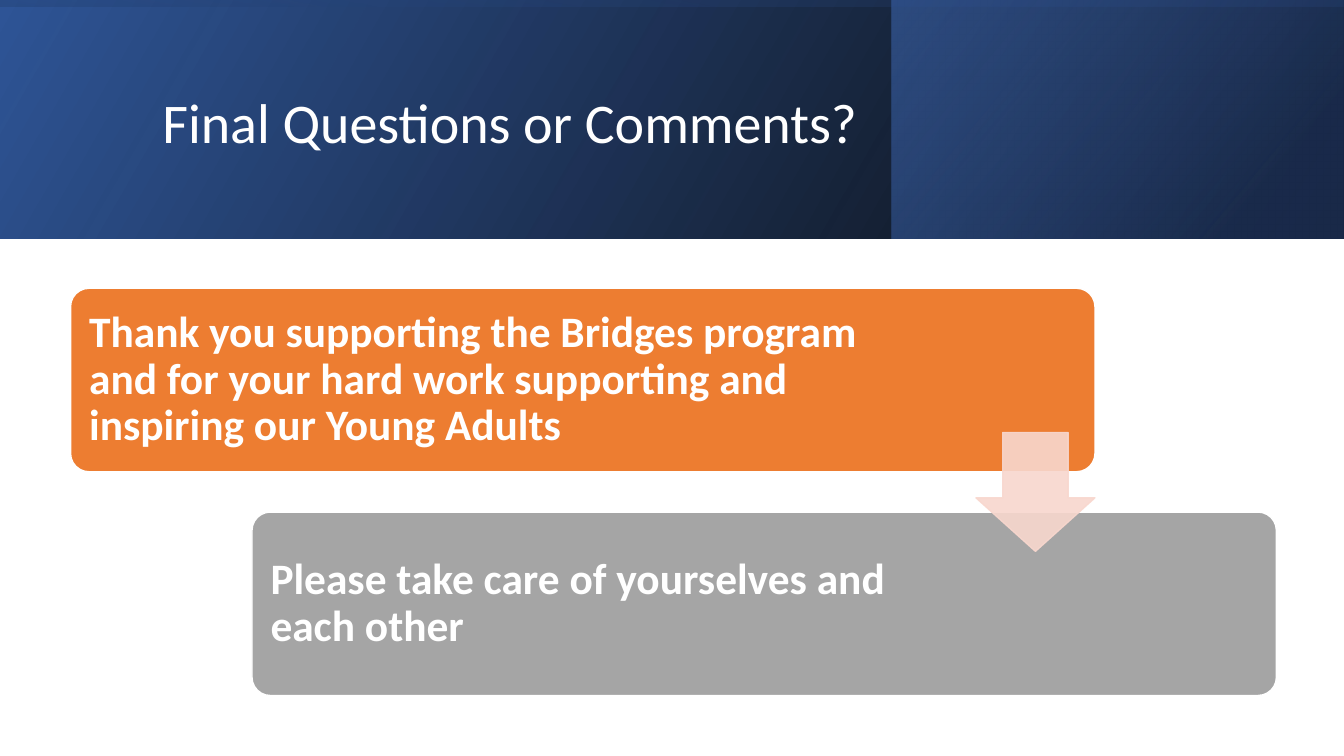
from dataclasses import dataclass

from lxml import etree
from pptx import Presentation
from pptx import util as u
from pptx.dml.color import RGBColor
from pptx.enum import shapes, text
from pptx.oxml.ns import qn

prs = Presentation()
prs.slide_width, prs.slide_height = u.Inches(13.33), u.Inches(7.5)
W, H = prs.slide_width, prs.slide_height
FONT, WHITE, BLUSH = "Calibri", "FFFFFF", "F8D7CE"
BAND_HEIGHT = 31.6


@dataclass
class Stop:
    position: int
    color: str
    alpha: int = 100


@dataclass
class Band:
    left: float
    width: float
    angle: int
    stops: list[Stop]
    turned: bool = False


@dataclass
class Card:
    message: str
    color: str
    text_width: float


# All positions and sizes are percentages of the slide
BANDS = [
    Band(0, 100, 330, [Stop(0, "000000", 96), Stop(100, "2F5597")]),
    Band(66.32, 33.61, 320, [Stop(19, "203864", 68), Stop(100, "4472C4", 48)]),
    Band(0, 100, 350, [Stop(23, "2F5597", 16), Stop(99, "000000", 45)], True),
]
CARDS = [
    Card("Thank you supporting the Bridges program and for your hard work "
         "supporting and inspiring our Young Adults", "ED7D31", 62.12),
    Card("Please take care of yourselves and each other", "A5A5A5", 53.11),
]
CARD_LEFT, CARD_TOP, CARD_WIDTH, CARD_HEIGHT = 5.25, 38.13, 76.22, 24.27
STEP_X, STEP_Y = 13.5, 29.6
INSET_X, INSET_Y = 0.4, 0.73


def px(share: float) -> int:
    return round(W * share / 100)


def py(share: float) -> int:
    return round(H * share / 100)


def rgb(color: str) -> RGBColor:
    return RGBColor.from_string(color)


def add_alpha(color_node, percent: int) -> None:
    etree.SubElement(color_node, qn("a:alpha")).set("val", str(percent * 1000))


def add_band(s, band: Band) -> None:
    left, top, width, height = px(band.left), 0, px(band.width), py(BAND_HEIGHT)
    if band.turned:  # swap the sides around the same centre
        left, top = left + (width - height) // 2, top + (height - width) // 2
        width, height = height, width
    sp = s.shapes.add_shape(shapes.MSO_SHAPE.RECTANGLE, left, top, width, height)
    sp.shadow.inherit = False
    sp.line.fill.background()
    sp.rotation = 270 if band.turned else 0
    sp._element.spPr.find(qn("a:xfrm")).set("flipH", "1")
    sp.fill.gradient()
    grad = sp._element.spPr.find(qn("a:gradFill"))
    for child in list(grad):
        grad.remove(child)
    grad.set("rotWithShape", "1")
    stops = etree.SubElement(grad, qn("a:gsLst"))
    for stop in band.stops:
        gs = etree.SubElement(stops, qn("a:gs"), pos=str(stop.position * 1000))
        color = etree.SubElement(gs, qn("a:srgbClr"), val=stop.color)
        if stop.alpha < 100:
            add_alpha(color, stop.alpha)
    etree.SubElement(grad, qn("a:lin"), ang=str(band.angle * 60000), scaled="0")


def add_solid(s, kind, left: float, top: float, width: float, height: float,
              fill: str, line: str):
    sp = s.shapes.add_shape(kind, px(left), py(top), px(width), py(height))
    sp.shadow.inherit = False
    sp.fill.solid()
    sp.fill.fore_color.rgb = rgb(fill)
    sp.line.color.rgb = rgb(line)
    sp.line.width = u.Pt(1)
    return sp


def write(tf, content: str, size: int, bold: bool) -> None:
    tf.word_wrap = True
    tf.auto_size = text.MSO_AUTO_SIZE.NONE
    tf.vertical_anchor = text.MSO_ANCHOR.MIDDLE
    tf.text = content
    p = tf.paragraphs[0]
    p.alignment = text.PP_ALIGN.LEFT
    p.line_spacing = 0.9
    font = p.runs[0].font
    font.name, font.size, font.bold = FONT, u.Pt(size), bold
    font.color.rgb = rgb(WHITE)


def add_card(s, card: Card, index: int) -> None:
    left, top = CARD_LEFT + index * STEP_X, CARD_TOP + index * STEP_Y
    sp = add_solid(s, shapes.MSO_SHAPE.ROUNDED_RECTANGLE, left, top,
                   CARD_WIDTH, CARD_HEIGHT, card.color, WHITE)
    sp.adjustments[0] = 0.1
    box = s.shapes.add_textbox(px(left + INSET_X), py(top + INSET_Y),
                               px(card.text_width), py(CARD_HEIGHT - 2 * INSET_Y))
    tf = box.text_frame
    tf.margin_left = tf.margin_right = tf.margin_top = tf.margin_bottom = px(0.98)
    write(tf, card.message, 31, True)


def add_arrow(s) -> None:
    sp = add_solid(s, shapes.MSO_SHAPE.DOWN_ARROW, 72.62, 57.2, 8.85, 15.73, BLUSH, BLUSH)
    sp.adjustments[0], sp.adjustments[1] = 0.55, 0.45
    for color in sp._element.spPr.iter(qn("a:srgbClr")):
        add_alpha(color, 90)


def main() -> None:
    s = prs.slides.add_slide(prs.slide_layouts[5])

    # Header bands
    for band in BANDS:
        add_band(s, band)

    # Title, brought in front of the bands
    title = s.shapes.title
    title.left, title.top, title.width, title.height = px(11.33), py(5.07), px(79.74), py(22.93)
    write(title.text_frame, "Final Questions or Comments?", 40, False)
    s.shapes._spTree.append(title._element)

    # Staggered cards and the arrow between them
    for index, card in enumerate(CARDS):
        add_card(s, card, index)
    add_arrow(s)

    prs.save("out.pptx")


if __name__ == "__main__":
    main()
